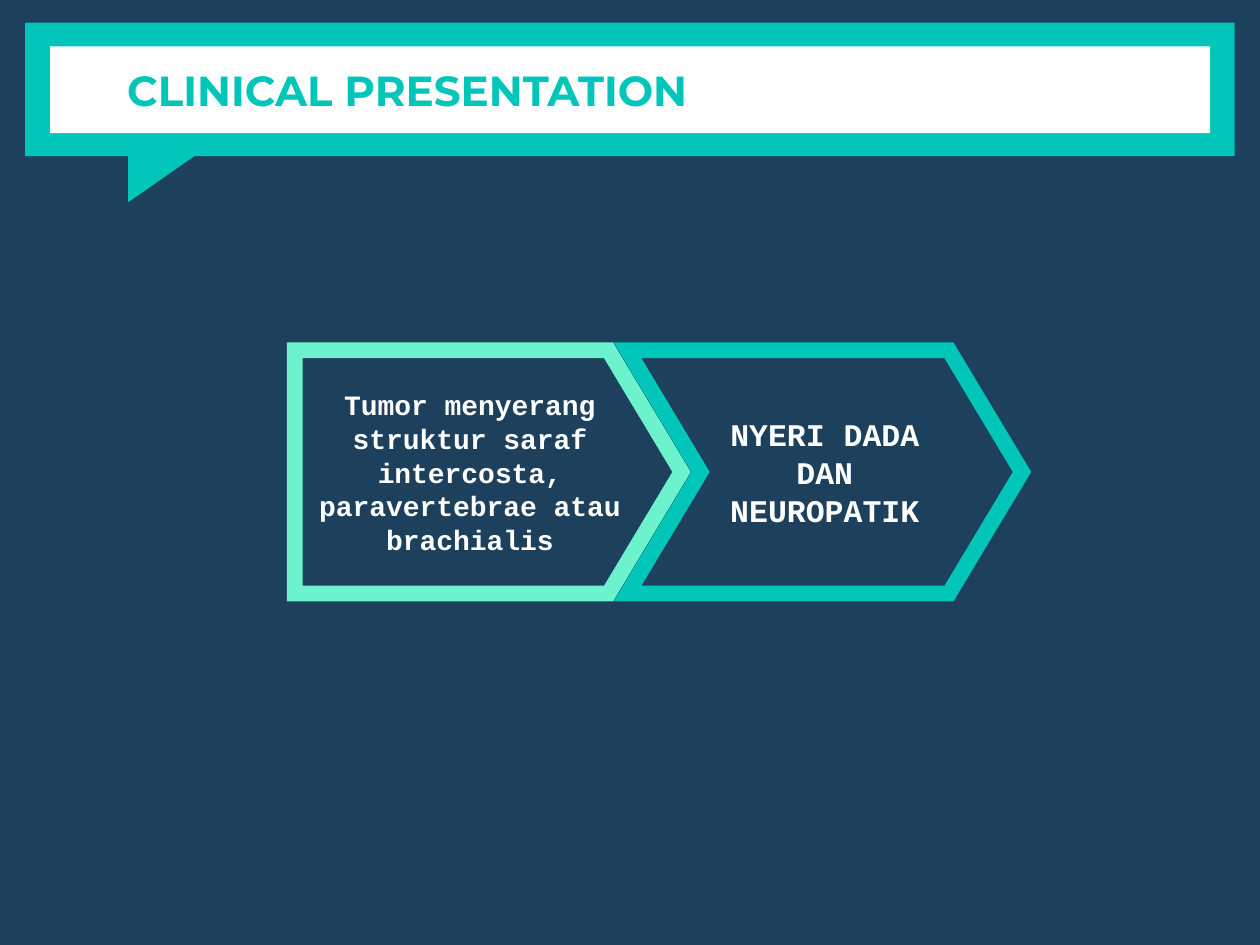
"""Build the clinical presentation slide with a banner title and two process arrows."""
import pptx
import pptx.util
import pptx.dml.color
import pptx.enum.shapes
import pptx.enum.text
import lxml.etree

Pt = pptx.util.Pt
SHAPES = pptx.enum.shapes.MSO_SHAPE
ALIGN = pptx.enum.text.PP_ALIGN
COLOURS = {"navy": "1D405D", "teal": "00C5B9", "mint": "6CF3CE", "white": "FFFFFF"}


def colour(name):
    return pptx.dml.color.RGBColor.from_string(COLOURS[name])


def add_block(shapes, kind, left, top, width, height, fill, rotation=0):
    block = shapes.add_shape(kind, Pt(left), Pt(top), Pt(width), Pt(height))
    block.shadow.inherit = False
    block.rotation = rotation
    block.fill.solid()
    block.fill.fore_color.rgb = colour(fill)
    block.line.fill.background()


def write_text(box, text, font, size, ink, align):
    frame = box.text_frame
    frame.text = text
    frame.word_wrap = True
    frame.auto_size = pptx.enum.text.MSO_AUTO_SIZE.NONE
    frame.vertical_anchor = pptx.enum.text.MSO_ANCHOR.MIDDLE
    frame.margin_left = frame.margin_right = Pt(7.2)
    frame.margin_top = frame.margin_bottom = Pt(7.2)
    para = frame.paragraphs[0]
    para.alignment = align
    for span in para.runs:
        span.font.name = font
        span.font.size = Pt(size)
        span.font.bold = True
        span.font.color.rgb = colour(ink)


def add_step(page, kind, left, width, outline, text, size):
    step = page.shapes.add_shape(kind, Pt(left), Pt(200.2), Pt(width), Pt(139))
    step.adjustments[0] = 0.3
    step.shadow.inherit = False
    step.fill.background()
    step.line.color.rgb = colour(outline)
    step.line.width = Pt(9)
    line = step.line.fill._xPr
    miter = lxml.etree.SubElement(line, pptx.oxml.ns.qn("a:miter"))
    miter.set("lim", "800000")
    write_text(step, text, "Courier New", size, "white", ALIGN.CENTER)


def add_banner(page):
    banner = page.shapes.add_group_shape().shapes
    add_block(banner, SHAPES.RECTANGLE, 14.4, 13, 691.2, 76.3, "teal")
    add_block(banner, SHAPES.RIGHT_TRIANGLE, 80.8, 73.4, 34.6, 49.7, "teal", 90)
    add_block(banner, SHAPES.RECTANGLE, 28.6, 26.6, 663, 49.6, "white")


def place_title(page, text):
    title = page.shapes.title
    title.left, title.top = Pt(65.5), Pt(13)
    title.width, title.height = Pt(626.4), Pt(76.3)
    write_text(title, text, "Montserrat", 24, "teal", ALIGN.LEFT)
    page.shapes._spTree.append(title._element)


def main():
    deck = pptx.Presentation()
    deck.slide_width, deck.slide_height = Pt(720), Pt(540)
    page = deck.slides.add_slide(deck.slide_layouts[5])
    page.background.fill.solid()
    page.background.fill.fore_color.rgb = colour("navy")
    add_banner(page)
    add_step(page, SHAPES.PENTAGON, 168.5, 221, "mint",
             "Tumor menyerang struktur saraf intercosta, paravertebrae atau brachialis", 16)
    add_step(page, SHAPES.CHEVRON, 358.6, 225.4, "teal", "NYERI DADA DAN NEUROPATIK", 18)
    place_title(page, "CLINICAL PRESENTATION")
    deck.save("out.pptx")


if __name__ == "__main__":
    main()
